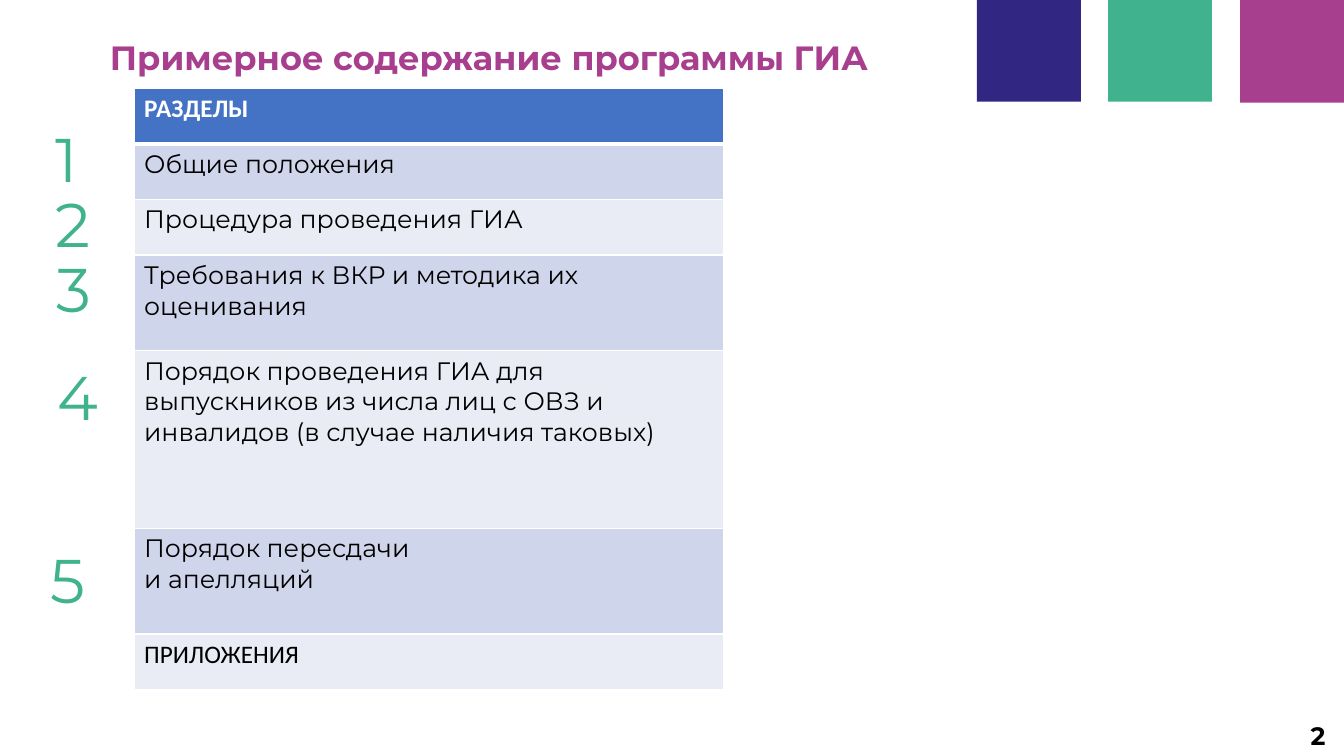
from dataclasses import dataclass

from lxml.etree import SubElement
from pptx import Presentation
from pptx.dml.color import RGBColor
from pptx.enum.shapes import MSO_SHAPE
from pptx.enum.text import MSO_ANCHOR, MSO_AUTO_SIZE, PP_ALIGN
from pptx.oxml.ns import qn
from pptx.util import Pt

PX = 9144  # EMU in one px, 100 px to the inch


@dataclass(frozen=True)
class Theme:
    indigo: str = "312782"
    green: str = "41B28E"
    magenta: str = "A73E8E"
    black: str = "000000"
    white: str = "FFFFFF"
    header: str = "4472C4"
    bands: tuple = ("CFD5EA", "E9EBF5")
    font: str = "Montserrat"
    table_font: str = "Calibri"
    title_size: int = 24
    number_size: int = 44
    text_size: int = 18


theme = Theme()


def write(frame, text, size, color, font=theme.font, bold=False):
    """Put left-aligned, wrapped text in a frame and format its runs."""
    frame.text = text
    frame.word_wrap = True
    for paragraph in frame.paragraphs:
        paragraph.alignment = PP_ALIGN.LEFT
        for run in paragraph.runs:
            run.font.name = font
            run.font.size = Pt(size)
            run.font.bold = bold
            run.font.color.rgb = RGBColor.from_string(color)


def add_borders(cell, widths):
    """Draw white cell borders; widths maps L, R, T, B to points."""
    properties = cell._tc.get_or_add_tcPr()
    for side, width in widths.items():
        line = SubElement(properties, qn(f"a:ln{side}"), w=str(Pt(width)))
        SubElement(SubElement(line, qn("a:solidFill")), qn("a:srgbClr"), val=theme.white)


prs = Presentation()
prs.slide_width, prs.slide_height = 1333 * PX, 750 * PX
slide = prs.slides.add_slide(prs.slide_layouts[5])
shapes = slide.shapes

# Corner squares
for left, top, color in (
    (969, -2, theme.indigo),
    (1099, -2, theme.green),
    (1230, -1, theme.magenta),
):
    square = shapes.add_shape(MSO_SHAPE.RECTANGLE, left * PX, top * PX, 103 * PX, 103 * PX)
    square.shadow.inherit = False
    square.fill.solid()
    square.fill.fore_color.rgb = RGBColor.from_string(color)
    square.line.fill.background()

# Title
title = shapes.title
title.left, title.top, title.width, title.height = 99 * PX, 17 * PX, 946 * PX, 84 * PX
write(title.text_frame, "Примерное содержание программы ГИА", theme.title_size,
      theme.magenta, bold=True)
title.text_frame.auto_size = MSO_AUTO_SIZE.NONE
title.text_frame.vertical_anchor = MSO_ANCHOR.MIDDLE
title.text_frame.paragraphs[0].line_spacing = 0.9

# Sections table
sections = (
    ("РАЗДЕЛЫ", 55),
    ("Общие положения", 55),
    ("Процедура проведения ГИА", 55),
    ("Требования к ВКР и методика их оценивания", 95),
    ("Порядок проведения ГИА для выпускников из числа лиц с ОВЗ и инвалидов "
     "(в случае наличия таковых)", 176),
    ("Порядок пересдачи\vи апелляций", 105),
    ("ПРИЛОЖЕНИЯ", 55),
)
table = shapes.add_table(len(sections), 1, 133 * PX, 88 * PX, 585 * PX,
                         sum(height for _, height in sections) * PX).table
for index, (section, height) in enumerate(sections):
    table.rows[index].height = height * PX
    cell = table.cell(index, 0)
    is_header = index == 0
    is_section = 0 < index < len(sections) - 1
    add_borders(cell, {"L": 1, "R": 1, "T": 3 if index == 1 else 1, "B": 3 if is_header else 1})
    cell.fill.solid()
    cell.fill.fore_color.rgb = RGBColor.from_string(
        theme.header if is_header else theme.bands[(index - 1) % 2])
    write(cell.text_frame, section, theme.text_size,
          theme.white if is_header else theme.black,
          font=theme.font if is_section else theme.table_font, bold=is_header)

# Section numbers
for number, (left, top, width, height, anchor, spacing) in enumerate((
    (45, 149, 54, 50, MSO_ANCHOR.BOTTOM, 0.9),
    (45, 200, 63, 64, MSO_ANCHOR.BOTTOM, 0.9),
    (46, 265, 61, 63, MSO_ANCHOR.BOTTOM, 0.9),
    (47, 375, 62, 60, MSO_ANCHOR.BOTTOM, 0.9),
    (40, 533, 59, 84, MSO_ANCHOR.TOP, 1.0),
), start=1):
    frame = shapes.add_textbox(left * PX, top * PX, width * PX, height * PX).text_frame
    write(frame, str(number), theme.number_size, theme.green)
    frame.vertical_anchor = anchor
    frame.paragraphs[0].line_spacing = spacing

# Page number
page_number = shapes.add_textbox(1290 * PX, 710 * PX, 43 * PX, 40 * PX)
write(page_number.text_frame, "2", theme.text_size, theme.black, bold=True)

prs.save("out.pptx")
